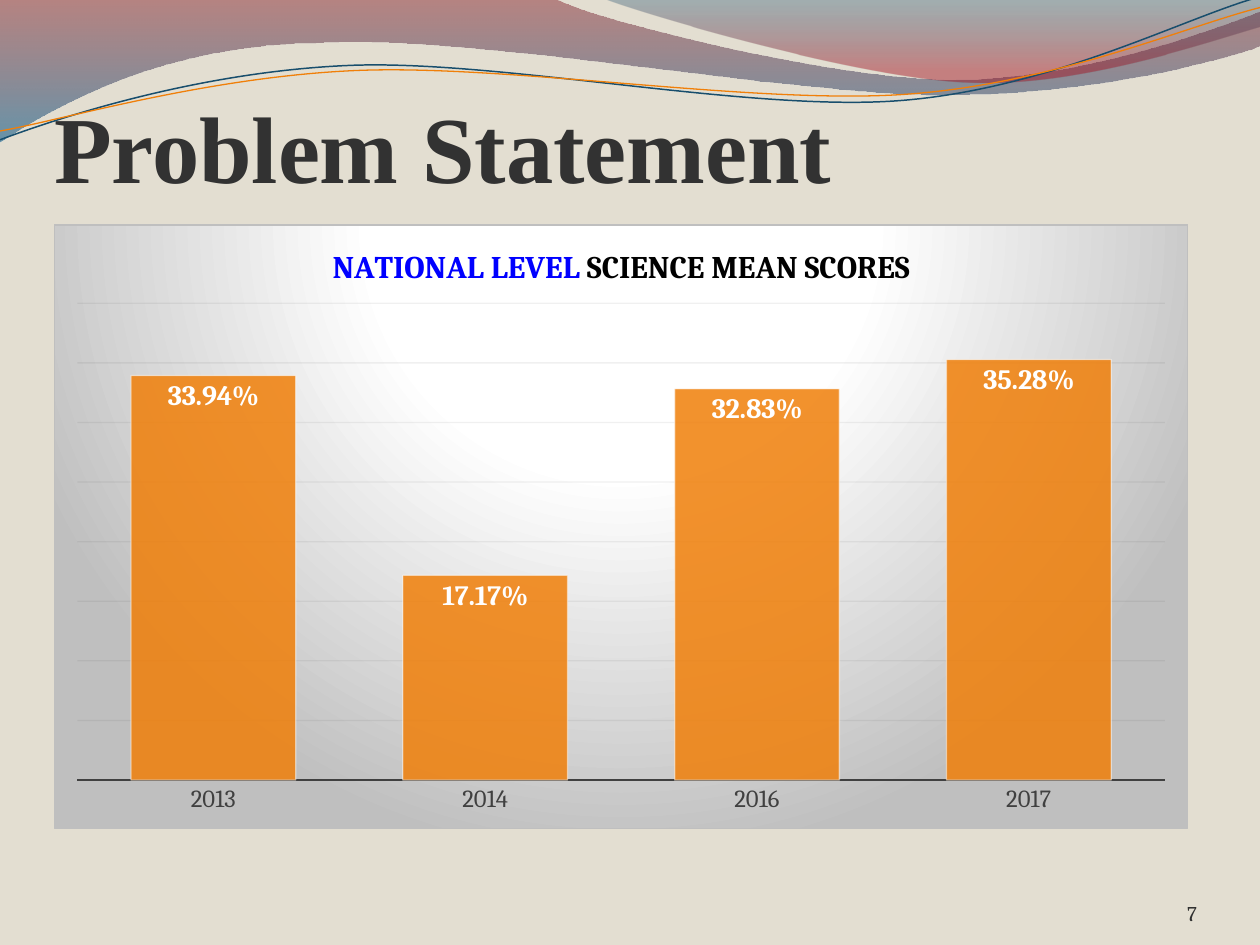
from dataclasses import dataclass

from lxml import etree
from pptx import Presentation
from pptx.chart.data import CategoryChartData
from pptx.dml.color import RGBColor
from pptx.enum.chart import XL_CHART_TYPE, XL_LABEL_POSITION, XL_TICK_LABEL_POSITION, XL_TICK_MARK
from pptx.enum.text import MSO_ANCHOR, PP_ALIGN
from pptx.oxml import parse_xml
from pptx.oxml.ns import qn
from pptx.util import Inches, Pt

COLUMNS = XL_CHART_TYPE.COLUMN_CLUSTERED
INSIDE_END = XL_LABEL_POSITION.INSIDE_END
NEXT_TO_AXIS = XL_TICK_LABEL_POSITION.NEXT_TO_AXIS
NO_TICK = XL_TICK_MARK.NONE
BOTTOM = MSO_ANCHOR.BOTTOM
LEFT, RIGHT = PP_ALIGN.LEFT, PP_ALIGN.RIGHT
DRAWING = "http://schemas.openxmlformats.org/drawingml/2006/main"
CHART = "http://schemas.openxmlformats.org/drawingml/2006/chart"


@dataclass(frozen=True)
class Theme:
    """Colours, fonts and type sizes of the slide."""
    paper: str = "E3DED1"
    title: str = "323232"
    number: str = "303030"
    navy: str = "184E6D"
    orange: str = "F07F09"
    axis: str = "404040"
    grid: str = "0D0D0D"
    blue: str = "0000FF"
    black: str = "000000"
    white: str = "FFFFFF"
    silver: str = "BFBFBF"
    heading_font: str = "Times New Roman"
    body_font: str = "Cambria"
    title_size: float = 54
    number_size: float = 12
    chart_title_size: float = 18
    label_size: float = 16
    category_size: float = 14.1


THEME = Theme()
DOWNWARD = '<a:lin ang="5400000" scaled="1"/>'
SPOTLIGHT = ('<a:path path="circle"><a:fillToRect l="50000" t="-80000" '
             'r="50000" b="180000"/></a:path>')

RIBBONS = [
    ((0, -0.01),
     [[(4.4, -0.01)],
      [(4.76, 0.17), (6.64, 0.63), (7.58, 0.63)],
      [(8.53, 0.63), (9.58, 0.26), (10, 0.09)],
      [(10.01, 0.36)],
      [(9.83, 0.44), (8.7, 0.76), (7.46, 0.75)],
      [(6.22, 0.75), (3.82, 0.28), (2.57, 0.34)],
      [(1.29, 0.35), (0.46, 0.83), (-0.01, 1.13)]],
     [(0, "7E1621", 45), (100, "005689", 55)]),
    ((4.79, -0.01),
     [[(5.09, 0.11), (6.82, 0.62), (7.69, 0.65)],
      [(8.56, 0.69), (9.61, 0.32), (10, 0.21)],
      [(10, 0)]],
     [(0, "094467", 30), (80, "A10F1F", 45)]),
]
STRANDS = [
    ((0, 1.11),
     [[(0.48, 0.93), (1.58, 0.57), (2.77, 0.52)],
      [(3.95, 0.47), (5.93, 0.89), (7.13, 0.8)],
      [(8.33, 0.71), (9.38, 0.15), (9.98, -0.02)]],
     THEME.navy, 0.85),
    ((0, 1.04),
     [[(0.47, 0.96), (1.64, 0.61), (2.83, 0.56)],
      [(4.03, 0.51), (5.97, 0.83), (7.17, 0.75)],
      [(8.36, 0.67), (9.41, 0.21), (10, 0.06)]],
     THEME.orange, 0.75),
]
SCORES = {"2013": 0.3394, "2014": 0.1717, "2016": 0.3283, "2017": 0.3528}


def set_values(target, values):
    """Set each named attribute of the target."""
    for name, value in values.items():
        setattr(target, name, value)


def style_font(font, face, size, color, bold=False):
    """Give a font its face, size, colour and weight."""
    set_values(font, {"name": face, "size": Pt(size), "bold": bold})
    font.color.rgb = RGBColor.from_string(color)


def style_line(line, color, width, opacity=100):
    """Give a line its colour, width and opacity."""
    line.width = Pt(width)
    line.fill.solid()
    line.color.rgb = RGBColor.from_string(color)
    set_opacity(line.fill, opacity)


def set_opacity(fill, percent):
    """Make a solid fill partly transparent."""
    if percent < 100:
        color = fill._xPr.find(".//" + qn("a:srgbClr"))
        etree.SubElement(color, qn("a:alpha"), val=str(percent * 1000))


def gradient_xml(stops, direction):
    """Return a gradient fill as XML text."""
    marks = "".join(
        f'<a:gs pos="{position * 1000}"><a:srgbClr val="{color}">'
        f'<a:alpha val="{opacity * 1000}"/></a:srgbClr></a:gs>'
        for position, color, opacity in stops)
    return f'<a:gradFill xmlns:a="{DRAWING}"><a:gsLst>{marks}</a:gsLst>{direction}</a:gradFill>'


def add_outline(page, origin, start, segments, close):
    """Draw an outline of straight and cubic segments offset from the origin."""
    points = [(Inches(origin[0] + x), Inches(origin[1] + y))
              for x, y in [start, *sum(segments, [])]]
    builder = page.shapes.build_freeform(*points[0])
    builder.add_line_segments(points[1:], close=close)
    shape = builder.convert_to_shape()
    shape.shadow.inherit = False
    shape.fill.background()
    steps = iter(shape._element.findall(".//" + qn("a:lnTo")))
    for segment in segments:
        group = [next(steps) for _ in segment]
        if len(group) == 3:
            curve = etree.Element(qn("a:cubicBezTo"))
            group[0].addprevious(curve)
            for step in group:
                curve.append(step[0])
                step.getparent().remove(step)
    return shape


def add_waves(page, origin):
    """Draw the ribbons and thin strands across the top."""
    for start, segments, stops in RIBBONS:
        ribbon = add_outline(page, origin, start, segments, True)
        ribbon.line.fill.background()
        properties = ribbon._element.spPr
        properties.replace(properties.find(qn("a:noFill")),
                           parse_xml(gradient_xml(stops, DOWNWARD)))
    for start, segments, color, width in STRANDS:
        strand = add_outline(page, origin, start, segments, False)
        style_line(strand.line, color, width)


def fill_text(shape, text, insets, align, *font):
    """Write one bottom-anchored paragraph in a shape."""
    frame = shape.text_frame
    names = ("margin_left", "margin_top", "margin_right", "margin_bottom")
    set_values(frame, dict(zip(names, map(Inches, insets))))
    set_values(frame, {"word_wrap": True, "vertical_anchor": BOTTOM})
    para = frame.paragraphs[0]
    para.alignment = align
    span = para.add_run()
    span.text = text
    style_font(span.font, *font)


def add_title(page, box):
    """Place the slide title in front of the waves."""
    title = page.shapes.title
    set_values(title, dict(zip(("left", "top", "width", "height"), map(Inches, box))))
    page.shapes._spTree.append(title._element)
    fill_text(title, "Problem Statement", (0, 0.05, 0, 0), LEFT,
              THEME.heading_font, THEME.title_size, THEME.title, True)


def add_number(page, box):
    """Place the slide number."""
    number = page.shapes.add_textbox(*map(Inches, box))
    fill_text(number, "7", (0, 0, 0, 0), RIGHT,
              THEME.body_font, THEME.number_size, THEME.number)


def style_chart_area(chart):
    """Give the chart its spotlight background, border and plot position."""
    stops = [(0, THEME.white, 100), (39, THEME.white, 100), (100, THEME.silver, 100)]
    chart._chartSpace.find(qn("c:chart")).addnext(parse_xml(
        f'<c:spPr xmlns:c="{CHART}" xmlns:a="{DRAWING}">{gradient_xml(stops, SPOTLIGHT)}'
        f'<a:ln w="9525"><a:solidFill><a:srgbClr val="{THEME.silver}"/></a:solidFill></a:ln>'
        '</c:spPr>'))
    plot_area = chart._chartSpace.find(".//" + qn("c:plotArea"))
    for old in plot_area.findall(qn("c:layout")):
        plot_area.remove(old)
    layout = etree.Element(qn("c:layout"))
    manual = etree.SubElement(layout, qn("c:manualLayout"))
    values = {"layoutTarget": "inner", "xMode": "edge", "yMode": "edge",
              "x": "0.02", "y": "0.13", "w": "0.96", "h": "0.79"}
    for name, value in values.items():
        etree.SubElement(manual, qn(f"c:{name}"), val=value)
    plot_area.insert(0, layout)


def add_scores_chart(page, box):
    """Draw the column chart of mean scores."""
    data = CategoryChartData(number_format="0.00%")
    data.categories = list(SCORES)
    data.add_series("Series 1", list(SCORES.values()))
    chart = page.shapes.add_chart(COLUMNS, *map(Inches, box), data).chart
    style_font(chart.font, THEME.body_font, 10, THEME.black)
    chart.has_legend = False
    style_chart_area(chart)

    para = chart.chart_title.text_frame.paragraphs[0]
    for text, color in (("NATIONAL LEVEL ", THEME.blue), ("SCIENCE MEAN SCORES", THEME.black)):
        span = para.add_run()
        span.text = text
        style_font(span.font, THEME.body_font, THEME.chart_title_size, color, True)
    chart.chart_title.include_in_layout = False

    years, values = chart.category_axis, chart.value_axis
    set_values(years, {"major_tick_mark": NO_TICK, "minor_tick_mark": NO_TICK,
                       "tick_label_position": NEXT_TO_AXIS})
    style_font(years.tick_labels.font, THEME.body_font, THEME.category_size, THEME.axis)
    style_line(years.format.line, THEME.axis, 1.5)
    set_values(values, {"minimum_scale": 0, "maximum_scale": 0.4, "major_unit": 0.05,
                        "has_major_gridlines": True, "visible": False})
    style_line(values.major_gridlines.format.line, THEME.grid, 0.75, 6)

    plot = chart.plots[0]
    set_values(plot, {"gap_width": 65, "vary_by_categories": False, "has_data_labels": True})
    set_values(plot.data_labels, {"show_value": True, "position": INSIDE_END,
                                  "number_format": "0.00%", "number_format_is_linked": False})
    style_font(plot.data_labels.font, THEME.body_font, THEME.label_size, THEME.white, True)
    columns = plot.series[0].format
    columns.fill.solid()
    columns.fill.fore_color.rgb = RGBColor.from_string(THEME.orange)
    set_opacity(columns.fill, 85)
    style_line(columns.line, THEME.white, 0.75, 50)


def main():
    """Build and save the deck."""
    deck = Presentation()
    set_values(deck, {"slide_width": Inches(10), "slide_height": Inches(7.5)})
    page = deck.slides.add_slide(deck.slide_layouts[5])
    page.background.fill.solid()
    page.background.fill.fore_color.rgb = RGBColor.from_string(THEME.paper)
    add_waves(page, (0, 0))
    add_title(page, (0.43, 0.36, 9, 1.25))
    add_number(page, (8.67, 6.95, 0.83, 0.4))
    add_scores_chart(page, (0.43, 1.78, 9, 4.8))
    deck.save("out.pptx")


if __name__ == "__main__":
    main()
